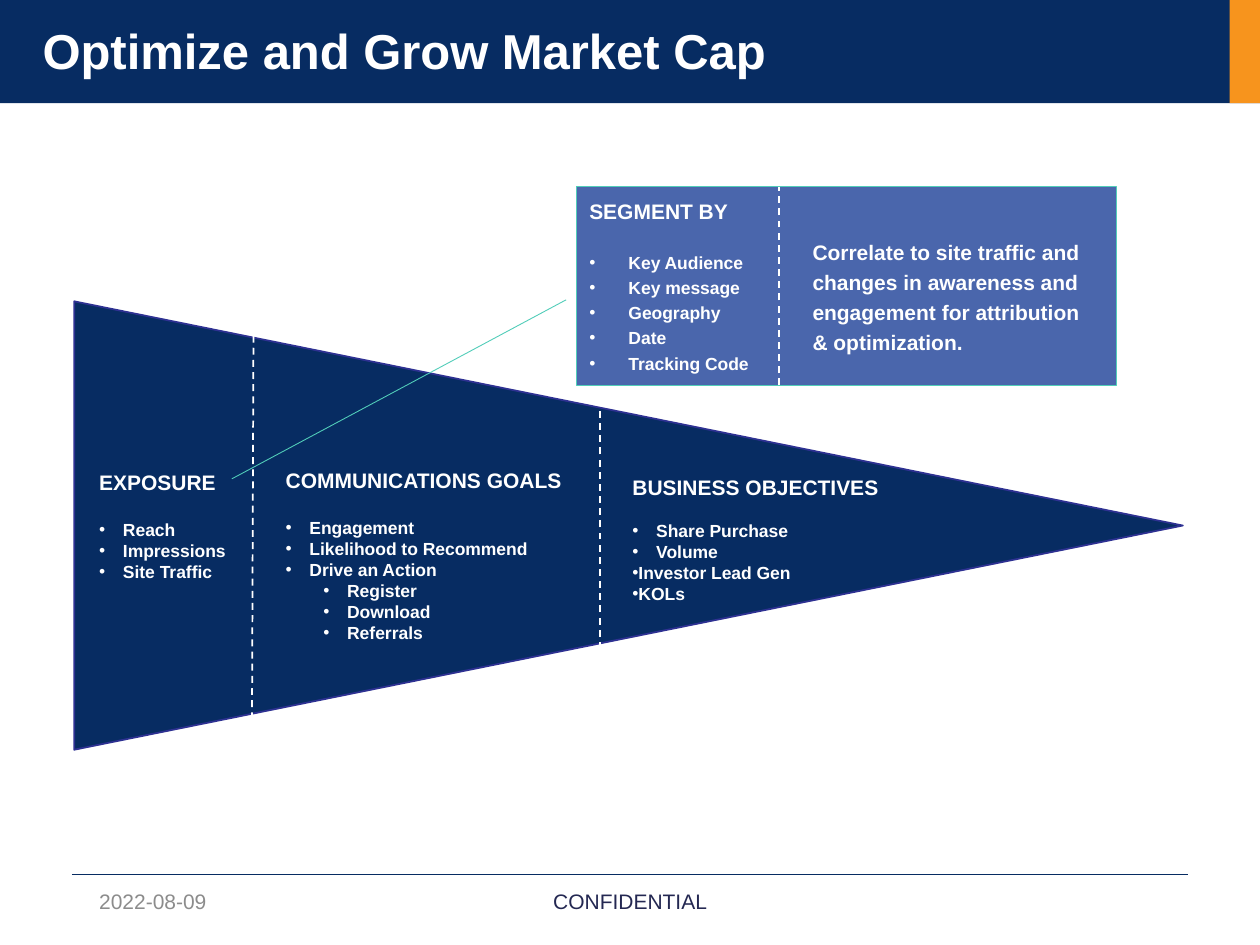
from typing import NamedTuple, Optional

from lxml import etree
from pptx import Presentation
from pptx.dml.color import RGBColor
from pptx.enum import dml, shapes, text
from pptx.oxml import ns
from pptx.util import Cm, Pt

COLORS = {
    "navy": "072C62",
    "orange": "F7941D",
    "white": "FFFFFF",
    "indigo": "2E3192",
    "blue": "4A66AC",
    "teal": "51CDB9",
    "ink": "242852",
    "gray": "8C8C8C",
}
FONT = "Arial"


class Box(NamedTuple):
    left: float
    top: float
    width: float
    height: float


class Line(NamedTuple):
    x1: float
    y1: float
    x2: float
    y2: float
    color: str = "white"
    dashed: bool = True


class Bullet(NamedTuple):
    words: str
    margin: float = 0.48
    indent: float = -0.48
    level: int = 0


class Stage(NamedTuple):
    box: Box
    heading: str
    gap: float
    bullets: list[Bullet]


STAGES = [
    Stage(Box(1.75, 9.32, 3.35, 2.57), "EXPOSURE", 13.8,
          [Bullet("Reach"), Bullet("Impressions"), Bullet("Site Traffic")]),
    Stage(Box(5.51, 9.27, 6.6, 3.86), "COMMUNICATIONS GOALS", 13.8,
          [Bullet("Engagement"), Bullet("Likelihood to Recommend"), Bullet("Drive an Action")]
          + [Bullet(action, margin=1.24, level=1)
             for action in ("Register", "Download", "Referrals")]),
    Stage(Box(12.5, 9.42, 6.58, 2.9), "BUSINESS OBJECTIVES", 11.5,
          [Bullet("Share Purchase"), Bullet("Volume")]
          + [Bullet(goal, margin=0, indent=-0.53)
             for goal in ("Investor Lead Gen", "KOLs")]),
]
SEGMENTS = ["Key Audience", "Key message", "Geography", "Date", "Tracking Code"]
DIVIDERS = [Line(5.08, 14.5, 5.11, 6.63), Line(12.09, 13.08, 12.09, 8)]


def rgb(color: str) -> RGBColor:
    return RGBColor.from_string(COLORS[color])


def place(box: Box) -> tuple:
    return tuple(Cm(length) for length in box)


def add_block(slide, kind, box: Box, fill: str, outline: Optional[str] = None,
              weight: float = 1):
    block = slide.shapes.add_shape(kind, *place(box))
    block.shadow.inherit = False
    block.fill.solid()
    block.fill.fore_color.rgb = rgb(fill)
    if outline:
        block.line.color.rgb = rgb(outline)
        block.line.width = Pt(weight)
    else:
        block.line.fill.background()
    return block


def add_line(slide, line: Line) -> None:
    rule = slide.shapes.add_connector(
        shapes.MSO_CONNECTOR.STRAIGHT, *(Cm(end) for end in line[:4]))
    rule.line.color.rgb = rgb(line.color)
    rule.line.width = Pt(1)
    if line.dashed:
        rule.line.dash_style = dml.MSO_LINE.DASH
    etree.SubElement(rule._element.spPr, ns.qn("a:effectLst"))


def style(paragraph, size: float, color: str = "white", bold: bool = True,
          align=text.PP_ALIGN.LEFT) -> None:
    paragraph.alignment = align
    paragraph.font.name = FONT
    paragraph.font.size = Pt(size)
    paragraph.font.bold = bold
    paragraph.font.color.rgb = rgb(color)


def add_text(slide, box: Box, words: str, size: float, color: str = "white",
             bold: bool = True, align=text.PP_ALIGN.LEFT,
             anchor=text.MSO_ANCHOR.TOP, spacing: float = 1.0) -> None:
    frame = slide.shapes.add_textbox(*place(box)).text_frame
    frame.word_wrap = True
    frame.vertical_anchor = anchor
    paragraph = frame.paragraphs[0]
    paragraph.text = words
    paragraph.line_spacing = spacing
    style(paragraph, size, color, bold, align)


def fill_list(frame, heading: str, gap: float, bullets: list[Bullet],
              spacing: float = 1.0) -> None:
    frame.word_wrap = True
    frame.vertical_anchor = text.MSO_ANCHOR.MIDDLE
    title = frame.paragraphs[0]
    title.text = heading
    title.space_after = Pt(gap)
    style(title, 12)
    for bullet in bullets:
        paragraph = frame.add_paragraph()
        paragraph.text = bullet.words
        paragraph.level = bullet.level
        paragraph.line_spacing = spacing
        properties = paragraph._p.get_or_add_pPr()
        properties.set("marL", str(int(Cm(bullet.margin))))
        properties.set("indent", str(int(Cm(bullet.indent))))
        etree.SubElement(properties, ns.qn("a:buFont")).set("typeface", FONT)
        etree.SubElement(properties, ns.qn("a:buChar")).set("char", "•")
        style(paragraph, 10)


def add_frame(slide) -> None:
    rectangle = shapes.MSO_SHAPE.RECTANGLE
    add_line(slide, Line(1.45, 17.63, 23.95, 17.63, "navy", False))
    add_block(slide, rectangle, Box(0, 0, 25.4, 2.08), "navy")
    add_block(slide, rectangle, Box(24.79, 0, 0.61, 2.08), "orange")
    middle = text.MSO_ANCHOR.MIDDLE
    add_text(slide, Box(8.41, 17.65, 8.59, 1.02), "CONFIDENTIAL", 12, "ink", False,
             text.PP_ALIGN.CENTER, middle)
    add_text(slide, Box(1.75, 17.65, 5.72, 1.02), "2022-08-09", 12, "gray", False,
             anchor=middle)
    add_text(slide, Box(0.61, 0.43, 21.06, 1.19), "Optimize and Grow Market Cap", 28,
             spacing=0.9)


def add_funnel(slide) -> None:
    funnel = add_block(slide, shapes.MSO_SHAPE.ISOSCELES_TRIANGLE,
                       Box(8.15, -0.58, 9.04, 22.35), "navy", "indigo")
    funnel.rotation = 90
    for stage in STAGES:
        stage_text = slide.shapes.add_textbox(*place(stage.box))
        fill_list(stage_text.text_frame, stage.heading, stage.gap, stage.bullets)
    for divider in DIVIDERS:
        add_line(slide, divider)


def add_segment_callout(slide) -> None:
    callout = add_block(slide, shapes.MSO_SHAPE.LINE_CALLOUT_1,
                        Box(11.63, 3.76, 10.87, 4.01), "blue", "teal", 0.5)
    for index, value in enumerate((0.57, -0.02, 1.47, -0.64)):
        callout.adjustments[index] = value
    fill_list(callout.text_frame, "SEGMENT BY", 13.8,
              [Bullet(segment, 0.79, -0.79) for segment in SEGMENTS], 1.2)
    add_text(slide, Box(16.13, 4.6, 6.17, 2.72),
             "Correlate to site traffic and changes in awareness and "
             "engagement for attribution & optimization.", 12, spacing=1.2)
    add_line(slide, Line(15.7, 7.77, 15.7, 3.76))


def main() -> None:
    deck = Presentation()
    deck.slide_width, deck.slide_height = Cm(25.4), Cm(19.05)
    slide = deck.slides.add_slide(deck.slide_layouts[6])
    add_frame(slide)
    add_funnel(slide)
    add_segment_callout(slide)
    deck.save("out.pptx")


if __name__ == "__main__":
    main()
